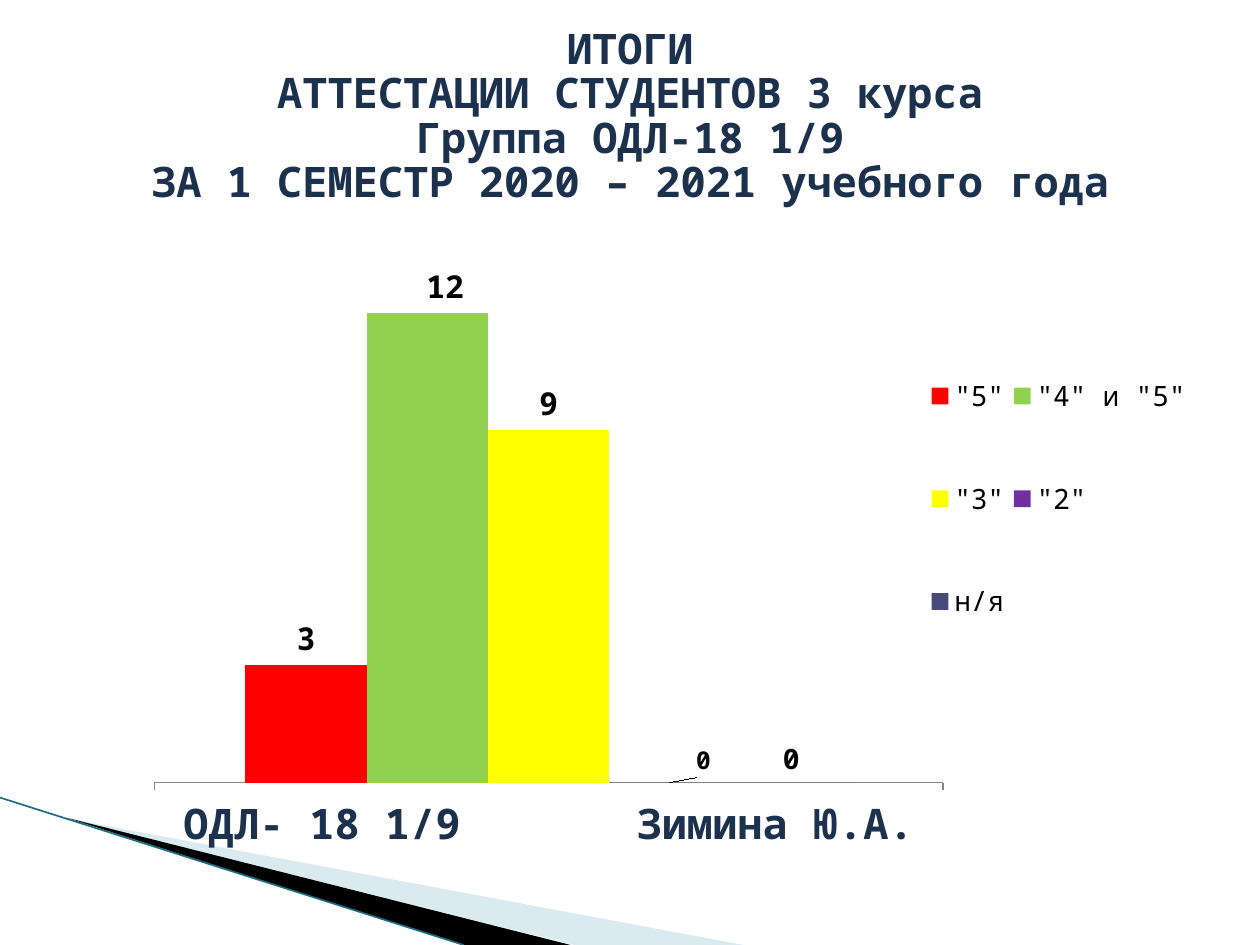
from lxml import etree
from pptx import Presentation
from pptx.chart.data import CategoryChartData
from pptx.dml.color import RGBColor
from pptx.enum.chart import (XL_CHART_TYPE, XL_LABEL_POSITION, XL_LEGEND_POSITION,
                             XL_TICK_LABEL_POSITION, XL_TICK_MARK)
from pptx.enum.shapes import MSO_CONNECTOR
from pptx.enum.text import MSO_ANCHOR, PP_ALIGN
from pptx.oxml import parse_xml
from pptx.oxml.ns import nsdecls, qn
from pptx.util import Inches, Pt

FONT = "Noto Sans Mono"
NAVY = "1C314E"
TITLE = [
    "ИТОГИ",
    "АТТЕСТАЦИИ СТУДЕНТОВ 3 курса",
    "Группа ОДЛ-18 1/9",
    "ЗА 1 СЕМЕСТР 2020 – 2021 учебного года",
]
GROUP = "ОДЛ- 18 1/9       Зимина Ю.А."
# grade, students, bar colour, label size, label shift as a share of chart width
GRADES = [
    ('"5"', 3, "FF0000", 18, 0),
    ('"4" и "5"', 12, "92D050", 18, 0.017),
    ('"3"', 9, "FFFF00", 18, 0),
    ('"2"', 0, "7030A0", 14, 0.032),
    ("н/я", 0, "474B78", 16, 0),
]
# corner points, colour, opacity in percent
WEDGES = [
    ([(0.55, 6.5), (5.9, 7.5), (4.56, 7.5)], "A0CBDC", 40),
    ([(0.53, 6.49), (4.53, 7.5), (3.68, 7.5)], "000000", 100),
]
EDGE = [(0, 6.33), (3.68, 7.5)]
TITLE_BOX = (0.5, 0.12, 9, 1.63)
CHART_BOX = (1.22, 1.86, 8.35, 5.12)
PLOT_SHARE = {"x": 0, "y": 0, "w": 0.75, "h": 0.85}
LEGEND_SHARE = {"x": 0.73, "y": 0.12, "w": 0.26, "h": 0.58}


def rgb(value):
    return RGBColor.from_string(value)


def inches(values):
    return [Inches(v) for v in values]


def format_font(font, size, color="000000", bold=False):
    values = {"name": FONT, "size": Pt(size), "bold": bold}
    for key, value in values.items():
        setattr(font, key, value)
    font.color.rgb = rgb(color)


def manual_layout(shares, inner=False):
    """Return a c:layout element with positions given as shares of the chart."""
    target = '<c:layoutTarget val="inner"/>' if inner else ""
    modes = "".join(f'<c:{k}Mode val="edge"/>' for k in "xy" if "w" in shares)
    places = "".join(f'<c:{k} val="{v}"/>' for k, v in shares.items())
    return parse_xml(f'<c:layout {nsdecls("c")}><c:manualLayout>{target}{modes}{places}'
                     "</c:manualLayout></c:layout>")


def replace_layout(parent, layout, index):
    for old in parent.findall(qn("c:layout")):
        parent.remove(old)
    parent.insert(index, layout)


def add_wedges(slide):
    for points, color, opacity in WEDGES:
        corners = [inches(point) for point in points]
        builder = slide.shapes.build_freeform(*corners[0])
        builder.add_line_segments(corners[1:], close=True)
        wedge = builder.convert_to_shape()
        wedge.shadow.inherit = False
        wedge.line.fill.background()
        wedge.fill.solid()
        wedge.fill.fore_color.rgb = rgb(color)
        if opacity < 100:
            tint = wedge.fill._xPr.find(".//" + qn("a:srgbClr"))
            etree.SubElement(tint, qn("a:alpha"), val=str(opacity * 1000))
    start, end = EDGE
    edge = slide.shapes.add_connector(MSO_CONNECTOR.STRAIGHT, *inches(start + end))
    edge.line.color.rgb = rgb("1B6F83")
    edge.line.width = Pt(0.95)
    etree.SubElement(edge._element.spPr, qn("a:effectLst"))


def fill_title(title):
    title.left, title.top, title.width, title.height = inches(TITLE_BOX)
    frame = title.text_frame
    frame.word_wrap = True
    frame.vertical_anchor = MSO_ANCHOR.MIDDLE
    frame.margin_top = frame.margin_bottom = 0
    frame.text = "\v".join(TITLE)
    heading = frame.paragraphs[0]
    heading.alignment = PP_ALIGN.CENTER
    heading.line_spacing = 0.88
    for run in heading.runs:
        format_font(run.font, 24, NAVY, True)


def add_grades_chart(slide):
    data = CategoryChartData()
    data.categories = [GROUP]
    for grade, students, *_ in GRADES:
        data.add_series(grade, [students])
    chart = slide.shapes.add_chart(
        XL_CHART_TYPE.COLUMN_CLUSTERED, *inches(CHART_BOX), data).chart
    format_font(chart.font, 10)
    chart.has_title = False

    plot = chart.plots[0]
    plot.gap_width, plot.overlap, plot.vary_by_categories = 150, 0, False
    for series, (_, _, color, size, shift) in zip(plot.series, GRADES):
        series.format.fill.solid()
        series.format.fill.fore_color.rgb = rgb(color)
        labels = series.data_labels
        labels.show_value = True
        labels.position = XL_LABEL_POSITION.OUTSIDE_END
        format_font(labels.font, size, bold=True)
        if shift:
            label = series.points[0].data_label
            format_font(label.font, size, bold=True)
            label.position = XL_LABEL_POSITION.OUTSIDE_END
            point = series._element.find(".//" + qn("c:dLbl"))
            replace_layout(point, manual_layout({"x": shift, "y": 0}), 1)

    groups = chart.category_axis
    groups.major_tick_mark = XL_TICK_MARK.OUTSIDE
    groups.format.line.color.rgb = rgb("868686")
    format_font(groups.tick_labels.font, 24, NAVY, True)
    students = chart.value_axis
    scale = {"minimum_scale": 0, "maximum_scale": 14, "has_major_gridlines": False,
             "tick_label_position": XL_TICK_LABEL_POSITION.NONE, "visible": False}
    for key, value in scale.items():
        setattr(students, key, value)

    chart.has_legend = True
    legend = chart.legend
    legend.position = XL_LEGEND_POSITION.RIGHT
    legend.include_in_layout = False
    format_font(legend.font, 16)
    replace_layout(legend._element, manual_layout(LEGEND_SHARE), 1)
    plot_area = chart._chartSpace.find(".//" + qn("c:plotArea"))
    replace_layout(plot_area, manual_layout(PLOT_SHARE, inner=True), 0)


def main():
    deck = Presentation()
    deck.slide_width, deck.slide_height = inches((10, 7.5))
    slide = deck.slides.add_slide(deck.slide_layouts[5])
    add_wedges(slide)
    fill_title(slide.shapes.title)
    add_grades_chart(slide)
    deck.save("out.pptx")


if __name__ == "__main__":
    main()
